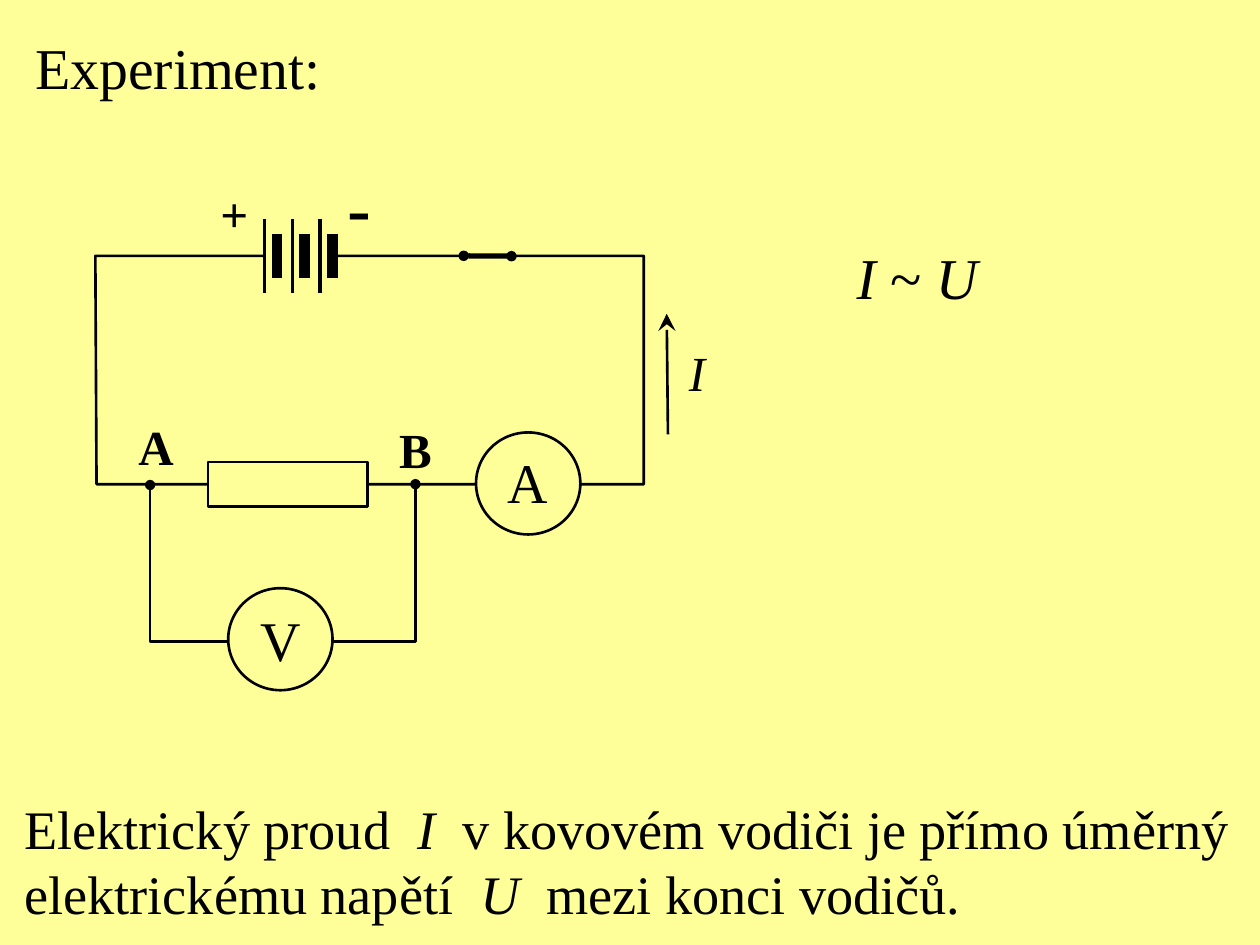
from lxml.etree import SubElement
from pptx import Presentation
from pptx.dml.color import RGBColor
from pptx.enum.shapes import MSO_CONNECTOR, MSO_SHAPE
from pptx.enum.text import MSO_ANCHOR, MSO_AUTO_SIZE, PP_ALIGN
from pptx.oxml.ns import qn
from pptx.util import Pt

THEME = {
    "font": "Times New Roman",
    "ink": RGBColor(0x00, 0x00, 0x00),
    "paper": RGBColor(0xFF, 0xFF, 0x99),
    "heading": 33, "conclusion": 31, "meter": 32, "label": 28, "minus": 40,
    "wire": 1.5, "switch": 3, "long plate": 2, "short plate": 6,
}

# Each paragraph is a list of (text, italic) runs; boxes are left, top, width, height.
TITLE = [[("Experiment:", False)]]
TITLE_BOX = (13, 14.4, 200, 46.8)
CONCLUSION = [
    [("Elektrický proud  ", False), ("I", True),
     ("  v kovovém vodiči je přímo úměrný", False)],
    [("elektrickému napětí  ", False), ("U ", True), (" mezi konci vodičů.", False)],
]
CONCLUSION_BOX = (6.8, 450.7, 708, 79.2)
RELATION = [[("I ", True), ("~ ", False), ("U", True)]]
RELATION_BOX = (482.4, 134.6, 83.5, 46.8)

SWITCH = [(265, 146.2), (292.3, 146.4)]
MAIN_LOOP = [(157.7, 146.2), (367.9, 146.2), (367.9, 276.7),
             (55.2, 276.7), (54.5, 146.2), (151.2, 146.2)]
VOLTMETER_LOOP = [(85.8, 277.2), (85.8, 366.5), (237.4, 366.5), (237.4, 276.7)]
CURRENT_ARROW = [(381.7, 248.2), (381, 179.3)]
RESISTOR_BOX = (118.8, 264, 91.4, 25.4)
BATTERY_GAP_BOX = (152.6, 139.7, 36, 15.8)
METER_SIZE = (59.6, 58.3)
AMMETER = ("A", (272, 247.1), (7.2, 0.7, 7.2, 3.6))
VOLTMETER = ("V", (130.4, 336.1), (7.2, 3.6, 7.2, 3.6))

BATTERY_LEFT, BATTERY_PITCH, CELLS = 151.2, 15.9, 3
PLATES = [("long plate", 0, 125, 167.4), ("short plate", 7, 134, 158.7)]

LABELS = [  # text, box, size, bold
    ("+", (118.8, 101.5, 30.2, 41), "label", True),
    ("-", (191.5, 90, 28, 55.4), "minus", True),
    ("A", (72, 234.7, 34.6, 41), "label", True),
    ("B", (221, 236.2, 33, 41), "label", True),
    ("I", (386.6, 192.2, 23.8, 41), "label", False),
]


def place(shape, box):
    shape.left, shape.top, shape.width, shape.height = map(Pt, box)


def write(shape, paragraphs, size, bold=False, align=PP_ALIGN.LEFT,
          anchor=MSO_ANCHOR.TOP, insets=(7.2, 3.6, 7.2, 3.6), grow=True):
    frame = shape.text_frame
    frame.word_wrap = False
    frame.auto_size = MSO_AUTO_SIZE.SHAPE_TO_FIT_TEXT if grow else MSO_AUTO_SIZE.NONE
    frame.vertical_anchor = anchor
    (frame.margin_left, frame.margin_top,
     frame.margin_right, frame.margin_bottom) = map(Pt, insets)
    for index, runs in enumerate(paragraphs):
        paragraph = frame.add_paragraph() if index else frame.paragraphs[0]
        properties = paragraph._p.get_or_add_pPr()
        properties.set("marL", "0")
        properties.set("indent", "0")
        SubElement(properties, qn("a:buNone"))
        paragraph.alignment = align
        paragraph.space_before = Pt(0)
        paragraph.line_spacing = Pt(round(THEME[size] * 1.2, 1))
        for text, italic in runs:
            run = paragraph.add_run()
            run.text = text
            run.font.name = THEME["font"]
            run.font.size = Pt(THEME[size])
            run.font.bold = bold
            run.font.italic = italic
            run.font.color.rgb = THEME["ink"]


def add_text(shapes, box, paragraphs, size, **options):
    write(shapes.add_textbox(*map(Pt, box)), paragraphs, size, **options)


def style_line(shape, width, head=None, tail=None, end_size="med"):
    shape.line.color.rgb = THEME["ink"]
    shape.line.width = Pt(THEME[width])
    outline = shape.line._get_or_add_ln()
    for tag, kind in (("a:headEnd", head), ("a:tailEnd", tail)):
        if kind:
            SubElement(outline, qn(tag), type=kind, w=end_size, len=end_size)


def add_line(shapes, ends, width, **arrowheads):
    (x1, y1), (x2, y2) = ends
    line = shapes.add_connector(MSO_CONNECTOR.STRAIGHT, Pt(x1), Pt(y1), Pt(x2), Pt(y2))
    style_line(line, width, **arrowheads)
    SubElement(line._element.spPr, qn("a:effectLst"))


def add_wire(shapes, points, **arrowheads):
    start, *rest = [(Pt(x), Pt(y)) for x, y in points]
    builder = shapes.build_freeform(*start)
    builder.add_line_segments(rest, close=False)
    wire = builder.convert_to_shape()
    wire.fill.background()
    wire.shadow.inherit = False
    style_line(wire, "wire", **arrowheads)


def add_part(shapes, kind, box, outlined=True):
    """Add a paper-coloured shape that hides the wire behind it."""
    part = shapes.add_shape(kind, *map(Pt, box))
    part.shadow.inherit = False
    part.fill.solid()
    part.fill.fore_color.rgb = THEME["paper"]
    if outlined:
        style_line(part, "wire")
    else:
        part.line.fill.background()
    return part


def add_meter(shapes, letter, corner, insets):
    meter = add_part(shapes, MSO_SHAPE.OVAL, corner + METER_SIZE)
    write(meter, [[(letter, False)]], "meter", align=PP_ALIGN.CENTER,
          anchor=MSO_ANCHOR.MIDDLE, insets=insets, grow=False)


def add_battery(shapes):
    add_part(shapes, MSO_SHAPE.RECTANGLE, BATTERY_GAP_BOX, outlined=False)
    for cell in range(CELLS):
        for plate, offset, top, bottom in PLATES:
            x = BATTERY_LEFT + cell * BATTERY_PITCH + offset
            add_line(shapes, [(x, top), (x, bottom)], plate)


def add_circuit(slide):
    shapes = slide.shapes.add_group_shape().shapes
    add_line(shapes, SWITCH, "switch", head="oval", tail="oval", end_size="sm")
    add_wire(shapes, MAIN_LOOP)
    add_meter(shapes, *AMMETER)
    add_part(shapes, MSO_SHAPE.RECTANGLE, RESISTOR_BOX)
    add_wire(shapes, VOLTMETER_LOOP, head="oval", tail="oval")
    add_meter(shapes, *VOLTMETER)
    add_battery(shapes)
    add_line(shapes, CURRENT_ARROW, "wire", tail="stealth", end_size="lg")
    for text, box, size, bold in LABELS:
        add_text(shapes, box, [[(text, not bold)]], size, bold=bold)


def main():
    deck = Presentation()
    deck.slide_width, deck.slide_height = Pt(720), Pt(540)
    slide = deck.slides.add_slide(deck.slide_layouts[1])
    slide.background.fill.solid()
    slide.background.fill.fore_color.rgb = THEME["paper"]

    title, conclusion = slide.placeholders
    place(title, TITLE_BOX)
    write(title, TITLE, "heading")
    place(conclusion, CONCLUSION_BOX)
    write(conclusion, CONCLUSION, "conclusion", insets=(7.2, 3.6, 7.2, 0.7))
    add_text(slide.shapes, RELATION_BOX, RELATION, "heading")
    add_circuit(slide)
    deck.save("out.pptx")


if __name__ == "__main__":
    main()
